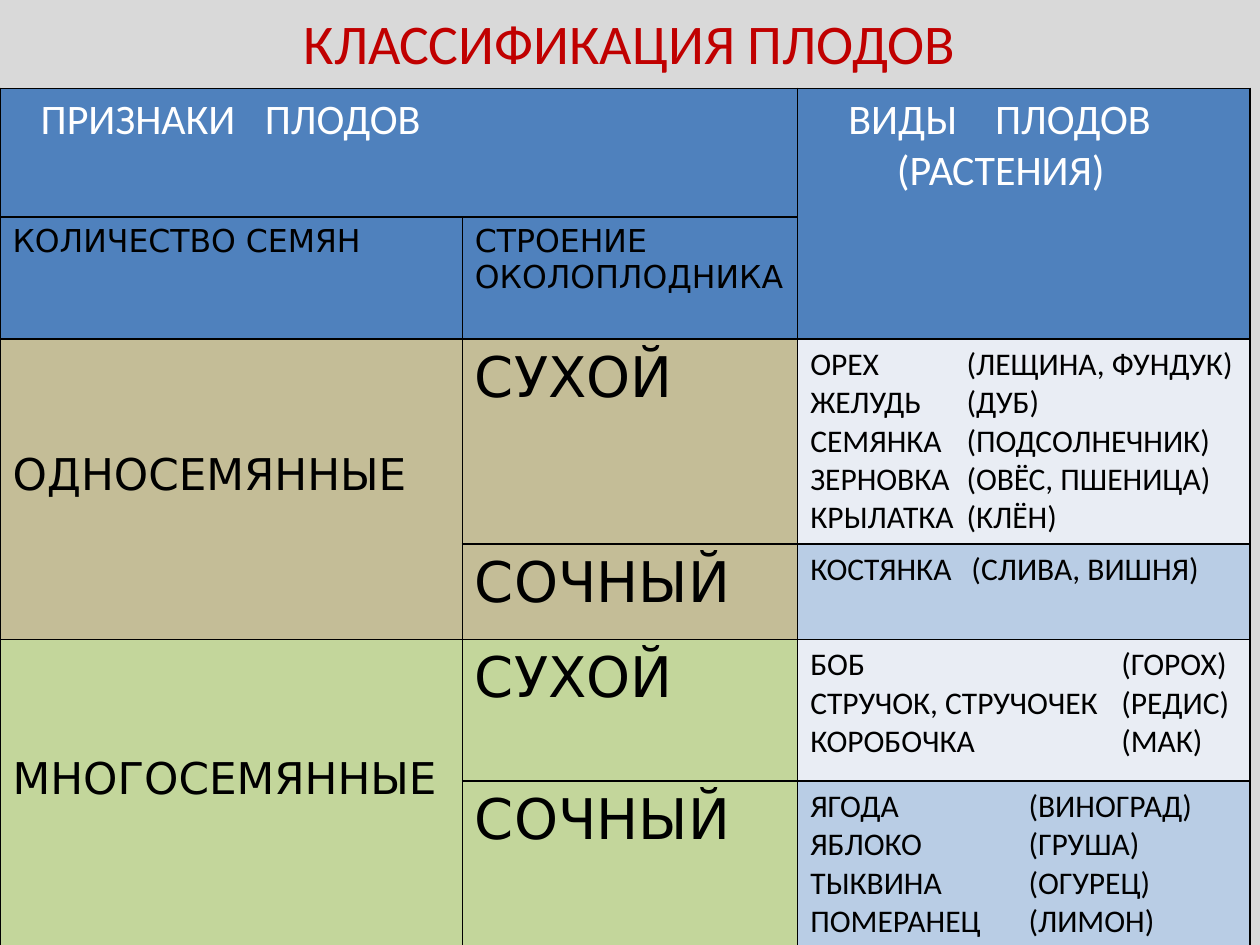
import pptx
import pptx.dml.color
import pptx.enum.text
import pptx.oxml
import pptx.oxml.ns
import pptx.util

Cm = pptx.util.Cm
Pt = pptx.util.Pt
ANCHOR = pptx.enum.text.MSO_ANCHOR
COLORS = {
    "back": "D9D9D9", "title": "C00000", "head": "4F81BD", "white": "FFFFFF",
    "black": "000000", "single": "C4BD97", "many": "C3D69B",
    "pale": "E9EDF4", "blue": "B9CDE5",
}
SANS = "DejaVu Sans"
COLS = [9.32, 6.76, 9.12]
ROWS = [2.59, 2.46, 4.14, 1.92, 2.85, 3.32]
MERGES = [(0, 0, 0, 1), (0, 2, 1, 2), (2, 0, 3, 0), (4, 0, 5, 0)]
KINDS = [
    (2, "pale", 3.15, ["ОРЕХ\t(ЛЕЩИНА, ФУНДУК)", "ЖЕЛУДЬ\t(ДУБ)",
                       "СЕМЯНКА\t(ПОДСОЛНЕЧНИК)", "ЗЕРНОВКА\t(ОВЁС, ПШЕНИЦА)",
                       "КРЫЛАТКА\t(КЛЁН)"]),
    (3, "blue", 3.25, ["КОСТЯНКА\t(СЛИВА, ВИШНЯ)"]),
    (4, "pale", 6.27, ["БОБ\t(ГОРОХ)", "СТРУЧОК, СТРУЧОЧЕК\t(РЕДИС)",
                       "КОРОБОЧКА\t(МАК)"]),
    (5, "blue", 4.4, ["ЯГОДА\t(ВИНОГРАД)", "ЯБЛОКО\t(ГРУША)",
                      "ТЫКВИНА\t(ОГУРЕЦ)", "ПОМЕРАНЕЦ\t(ЛИМОН)"]),
]


def tint(name):
    """Return the named colour."""
    return pptx.dml.color.RGBColor.from_string(COLORS[name])


def style(para, size, face, color):
    """Set the font of a paragraph."""
    font = para.font
    font.size, font.name, font.bold = Pt(size), face, False
    font.color.rgb = tint(color)


def stop(para, place):
    """Add a tab stop to a paragraph."""
    tabs = pptx.oxml.parse_xml(
        f'<a:tabLst {pptx.oxml.ns.nsdecls("a")}>'
        f'<a:tab pos="{Cm(place)}" algn="l"/></a:tabLst>')
    para._p.get_or_add_pPr().append(tabs)


def edge(cell):
    """Draw a thin black border round a cell."""
    props = cell._tc.get_or_add_tcPr()
    for side in "LRTB":
        props.append(pptx.oxml.parse_xml(
            f'<a:ln{side} {pptx.oxml.ns.nsdecls("a")} w="{Pt(1)}"><a:solidFill>'
            f'<a:srgbClr val="{COLORS["black"]}"/></a:solidFill></a:ln{side}>'))


def write(cell, lines, size, face, fill, color="black", tab=None):
    """Fill a cell with colour and lines of text."""
    cell.fill.solid()
    cell.fill.fore_color.rgb = tint(fill)
    cell.text_frame.text = "\n".join(lines)
    for para in cell.text_frame.paragraphs:
        if tab and "\t" in para.text:
            stop(para, tab)
        style(para, size, face, color)


def heading(slide, left, top, width, height):
    """Place the title on its grey panel."""
    title = slide.shapes.title
    title.left, title.top, title.width, title.height = left, top, width, height
    title.fill.solid()
    title.fill.fore_color.rgb = tint("back")
    frame = title.text_frame
    frame.text = "КЛАССИФИКАЦИЯ ПЛОДОВ"
    frame.auto_size = pptx.enum.text.MSO_AUTO_SIZE.NONE
    frame.vertical_anchor = ANCHOR.TOP
    frame.margin_top = Cm(0.18)
    style(frame.paragraphs[0], 32, "Calibri", "title")


def header(table):
    """Write the header cells."""
    signs, kinds = table.cell(0, 0), table.cell(0, 2)
    write(signs, ["ПРИЗНАКИ\tПЛОДОВ"], 24, "Calibri", "head", "white", 4.52)
    signs.margin_left = Cm(0.82)
    write(kinds, ["ВИДЫ\tПЛОДОВ", "(РАСТЕНИЯ)"], 24, "Calibri", "head", "white", 2.96)
    kinds.margin_left = Cm(1.02)
    kinds.text_frame.paragraphs[1]._p.get_or_add_pPr().set("marL", str(Cm(0.98)))
    write(table.cell(1, 0), ["КОЛИЧЕСТВО СЕМЯН"], 18, SANS, "head")
    write(table.cell(1, 1), ["СТРОЕНИЕ", "ОКОЛОПЛОДНИКА"], 18, SANS, "head")


def grid(slide, left, top, width, height):
    """Build the table of fruit types."""
    table = slide.shapes.add_table(
        len(ROWS), len(COLS), left, top, width, height).table
    table.first_row = table.horz_banding = False
    for col, size in zip(table.columns, COLS):
        col.width = Cm(size)
    for row, size in zip(table.rows, ROWS):
        row.height = Cm(size)
    for cell in table.iter_cells():
        edge(cell)
    for r, c, last, end in MERGES:
        table.cell(r, c).merge(table.cell(last, end))
    header(table)
    for r, name, fill in [(2, "ОДНОСЕМЯННЫЕ", "single"), (4, "МНОГОСЕМЯННЫЕ", "many")]:
        group = table.cell(r, 0)
        write(group, [name], 25, SANS, fill)
        group.vertical_anchor = ANCHOR.MIDDLE
        group.margin_bottom = Cm(0.7)
        for step, wall in enumerate(["СУХОЙ", "СОЧНЫЙ"]):
            write(table.cell(r + step, 1), [wall], 32, SANS, fill)
    for r, fill, tab, lines in KINDS:
        write(table.cell(r, 2), lines, 18, "Calibri", fill, tab=tab)


def main():
    """Build and save the slide."""
    deck = pptx.Presentation()
    deck.slide_width, deck.slide_height = Cm(25.4), Cm(19.05)
    slide = deck.slides.add_slide(deck.slide_layouts[5])
    heading(slide, 0, 0, deck.slide_width, deck.slide_height)
    grid(slide, 0, Cm(1.78), Cm(sum(COLS)), Cm(sum(ROWS)))
    deck.save("out.pptx")


if __name__ == "__main__":
    main()
